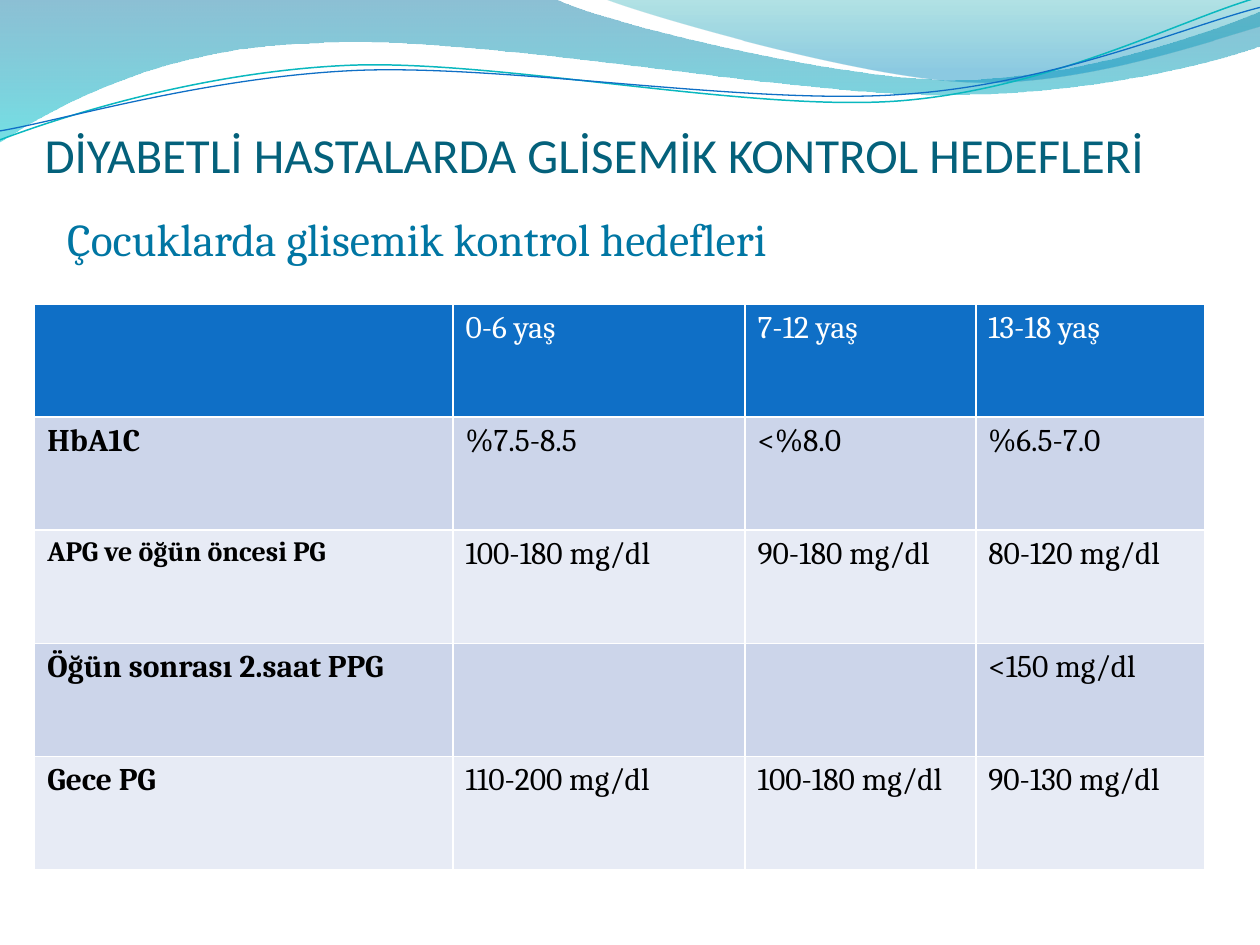
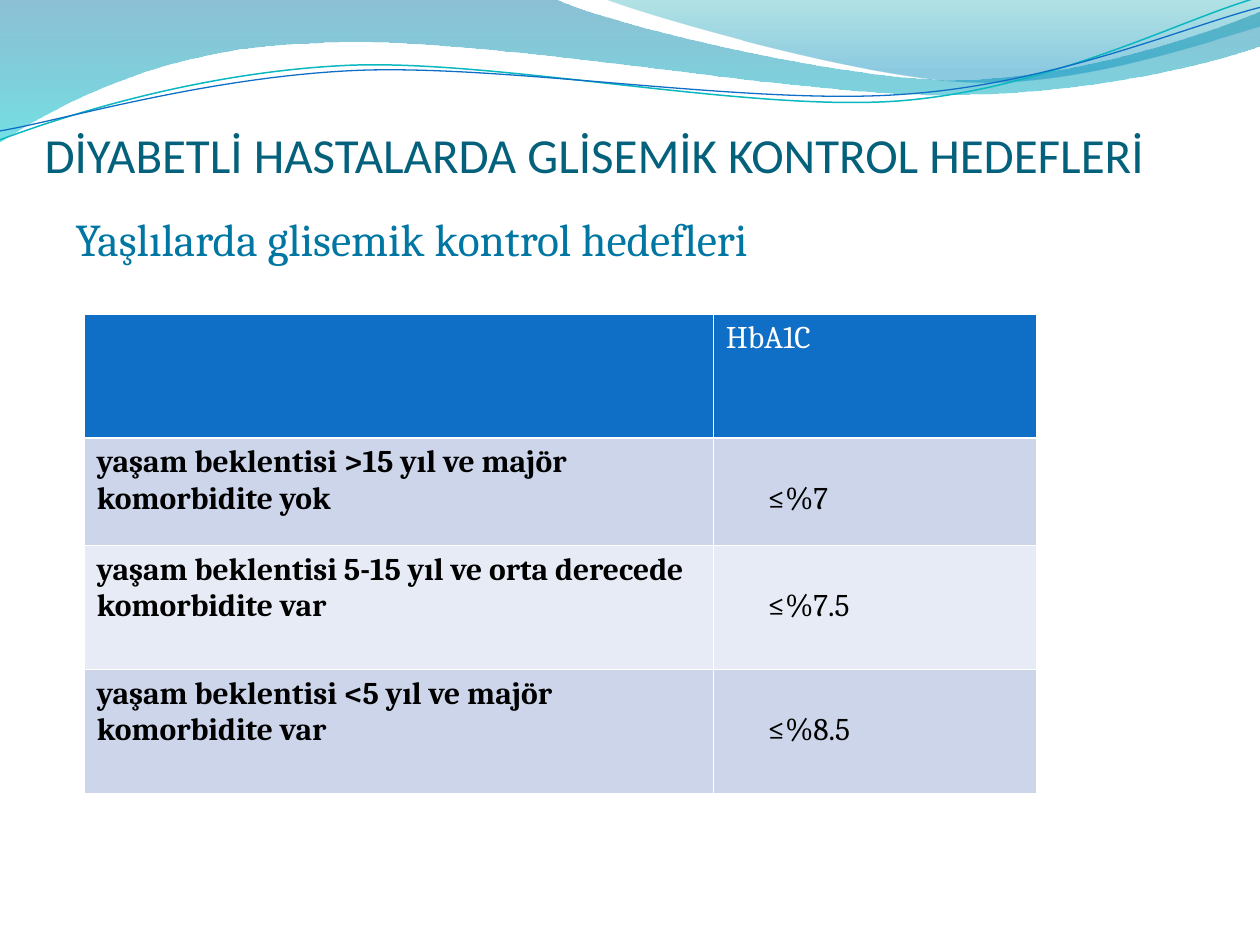
from lxml import etree
from pptx import Presentation
from pptx import util as u
from pptx.dml import color
from pptx.enum import text
from pptx.oxml import ns

DARK_TEAL, BLUE, HEADER_BLUE = "04617B", "0076A3", "0F6FC6"
WHITE, BLACK, BANDS = "FFFFFF", "000000", ("CCD5EA", "E7EBF5")
HEADING_FONT, BODY_FONT = "Calibri", "Cambria"
TITLE = "DİYABETLİ HASTALARDA GLİSEMİK KONTROL HEDEFLERİ"
LINE_TILT = 357.3

WIDE_WAVE = [
    [(0, 0)], [(11.18, -0.03)],
    [(12.09, 0.43), (16.87, 1.6), (19.25, 1.6)],
    [(21.67, 1.6), (24.33, 0.66), (25.4, 0.23)],
    [(25.43, 0.91)],
    [(24.97, 1.12), (22.1, 1.93), (18.95, 1.91)],
    [(15.8, 1.91), (9.7, 0.71), (6.53, 0.86)],
    [(3.28, 0.91), (1.17, 2.11), (-0.03, 2.87)],
    [(0, 0)],
]
RIGHT_WAVE = [
    [(12.17, -0.03)],
    [(12.93, 0.28), (17.32, 1.57), (19.53, 1.65)],
    [(21.74, 1.75), (24.41, 0.81), (25.4, 0.53)],
    [(25.4, 0)],
    [(12.17, -0.03)],
]
TEAL_LINE = [
    [(-0.05, 2.22)],
    [(1.19, 1.82), (4.02, 1.04), (7.05, 1.05)],
    [(10.05, 1.07), (15.02, 2.37), (18.08, 2.29)],
    [(21.13, 2.2), (23.86, 0.91), (25.41, 0.55)],
]
BLUE_LINE = [
    [(-0.04, 2.04)],
    [(1.16, 1.9), (4.17, 1.15), (7.2, 1.16)],
    [(10.25, 1.18), (15.13, 2.25), (18.19, 2.16)],
    [(21.21, 2.1), (23.93, 1.06), (25.45, 0.75)],
]

CHILD_ROWS = [
    ["", "0-6 yaş", "7-12 yaş", "13-18 yaş"],
    ["HbA1C", "%7.5-8.5", "<%8.0", "%6.5-7.0"],
    ["APG ve öğün öncesi PG", "100-180 mg/dl", "90-180 mg/dl", "80-120 mg/dl"],
    ["Öğün sonrası 2.saat PPG", "", "", "<150 mg/dl"],
    ["Gece PG", "110-200 mg/dl", "100-180 mg/dl", "90-130 mg/dl"],
]
ELDERLY_ROWS = [
    ["", "HbA1C"],
    ["yaşam beklentisi >15 yıl ve majör komorbidite yok", "≤%7"],
    ["yaşam beklentisi 5-15 yıl ve orta derecede komorbidite var", "≤%7.5"],
    ["yaşam beklentisi <5 yıl ve majör komorbidite var", "≤%8.5"],
]


def rgb(value):
    return color.RGBColor.from_string(value)


def add_run(para, words, size, font, tint, bold=False):
    span = para.add_run()
    span.text = words
    span.font.size = u.Pt(size)
    span.font.name = font
    span.font.bold = bold
    span.font.color.rgb = rgb(tint)


def place(shape, left, top, width, height):
    shape.left, shape.top = u.Cm(left), u.Cm(top)
    shape.width, shape.height = u.Cm(width), u.Cm(height)


def bend_segments(shape, segments):
    steps = list(shape.element.iter(ns.qn("a:lnTo")))
    for segment in segments[1:]:
        corners, steps = steps[:len(segment)], steps[len(segment):]
        if len(segment) == 3:
            curve = etree.Element(ns.qn("a:cubicBezTo"))
            corners[0].addprevious(curve)
            for corner in corners:
                curve.append(corner[0])
                corner.getparent().remove(corner)


def add_outline(page, segments, close):
    start, *others = [(u.Cm(x), u.Cm(y)) for segment in segments for x, y in segment]
    builder = page.shapes.build_freeform(*start)
    builder.add_line_segments(others, close=close)
    shape = builder.convert_to_shape()
    bend_segments(shape, segments)
    shape.shadow.inherit = False
    return shape


def add_wave(page, segments, stops):
    wave = add_outline(page, segments, True)
    wave.line.fill.background()
    wave.fill.gradient()
    wave.fill.gradient_angle = 270
    for stop, (position, tint, _) in zip(wave.fill.gradient_stops, stops):
        stop.position = position
        stop.color.rgb = rgb(tint)
    tints = wave.element.spPr.iter(ns.qn("a:srgbClr"))
    for tint, (_, _, opacity) in zip(tints, stops):
        etree.SubElement(tint, ns.qn("a:alpha")).set("val", str(opacity * 1000))
    return wave


def add_wave_line(page, segments, tint, width):
    curve = add_outline(page, segments, False)
    curve.rotation = LINE_TILT
    curve.fill.background()
    curve.line.color.rgb = rgb(tint)
    curve.line.width = u.Pt(width)
    return curve


def move_banner_to_master(deck, page):
    banner = [
        add_wave(page, WIDE_WAVE, [(0, "0074A1", 45), (1, "00C6CF", 55)]),
        add_wave(page, RIGHT_WAVE, [(0, "00A1A9", 30), (0.8, "008BBF", 45)]),
        add_wave_line(page, TEAL_LINE, "0AB8BF", 0.85),
        add_wave_line(page, BLUE_LINE, HEADER_BLUE, 0.75),
    ]
    tree = deck.slide_master.shapes.element
    for order, shape in enumerate(banner):
        shape.element.nvSpPr.cNvPr.set("id", str(100 + order))
        tree.insert(2 + order, shape.element)


def add_title(page):
    box = page.shapes.title
    place(box, 0.9, 2.13, 23.27, 1.57)
    frame = box.text_frame
    frame.auto_size = text.MSO_AUTO_SIZE.NONE
    frame.word_wrap = True
    frame.vertical_anchor = text.MSO_ANCHOR.BOTTOM
    frame.margin_left = frame.margin_right = frame.margin_bottom = 0
    frame.margin_top = u.Cm(0.13)
    para = frame.paragraphs[0]
    para.alignment = text.PP_ALIGN.LEFT
    add_run(para, TITLE, 28, HEADING_FONT, DARK_TEAL)


def add_subtitle(page, words, left, top, hanging):
    box = page.placeholders[1]
    place(box, left, top, 22.86, 12.19)
    box.text_frame.auto_size = text.MSO_AUTO_SIZE.NONE
    para = box.text_frame.paragraphs[0]
    properties = para._p.get_or_add_pPr()
    properties.set("marL", str(u.Cm(hanging)))
    properties.set("indent", str(-u.Cm(hanging)))
    etree.SubElement(properties, ns.qn("a:buNone"))
    para.space_before = u.Pt(0)
    add_run(para, words, 26, BODY_FONT, BLUE)


def add_goal_table(page, rows, left, top, widths, heights):
    frame = page.shapes.add_table(len(rows), len(widths), u.Cm(left), u.Cm(top),
                                  u.Cm(sum(widths)), u.Cm(sum(heights)))
    table = frame.table
    for column, width in zip(table.columns, widths):
        column.width = u.Cm(width)
    for row, height in zip(table.rows, heights):
        row.height = u.Cm(height)
    for r, values in enumerate(rows):
        for c, value in enumerate(values):
            cell = table.cell(r, c)
            cell.fill.solid()
            cell.fill.fore_color.rgb = rgb(BANDS[(r - 1) % 2] if r else HEADER_BLUE)
            if value:
                size = 16 if value.startswith("APG") else 18
                add_run(cell.text_frame.paragraphs[0], value, size, BODY_FONT,
                        BLACK if r else WHITE, bold=r > 0 and c == 0)
    return table


def add_page(deck, subtitle, left, top, hanging=0):
    page = deck.slides.add_slide(deck.slide_layouts[1])
    add_title(page)
    add_subtitle(page, subtitle, left, top, hanging)
    return page


def main():
    deck = Presentation()
    deck.slide_width, deck.slide_height = u.Cm(25.4), u.Cm(19.05)

    children = add_page(deck, "Çocuklarda glisemik kontrol hedefleri", 1.1, 4.13)
    move_banner_to_master(deck, children)
    add_goal_table(children, CHILD_ROWS, 0.7, 6.13, [8.43, 5.89, 4.65, 4.62], [2.28] * 5)

    elderly = add_page(deck, "Yaşlılarda glisemik kontrol hedefleri", 1.27, 4.12, 0.76)
    goals = add_goal_table(elderly, ELDERLY_ROWS, 1.7, 6.33, [12.68, 6.52],
                           [2.5, 2.17, 2.5, 2.5])
    for r in range(1, len(ELDERLY_ROWS)):
        goals.cell(r, 1).margin_left = u.Cm(1.1)
        goals.cell(r, 1).margin_top = u.Cm(0.86)

    deck.save("out.pptx")


if __name__ == "__main__":
    main()
